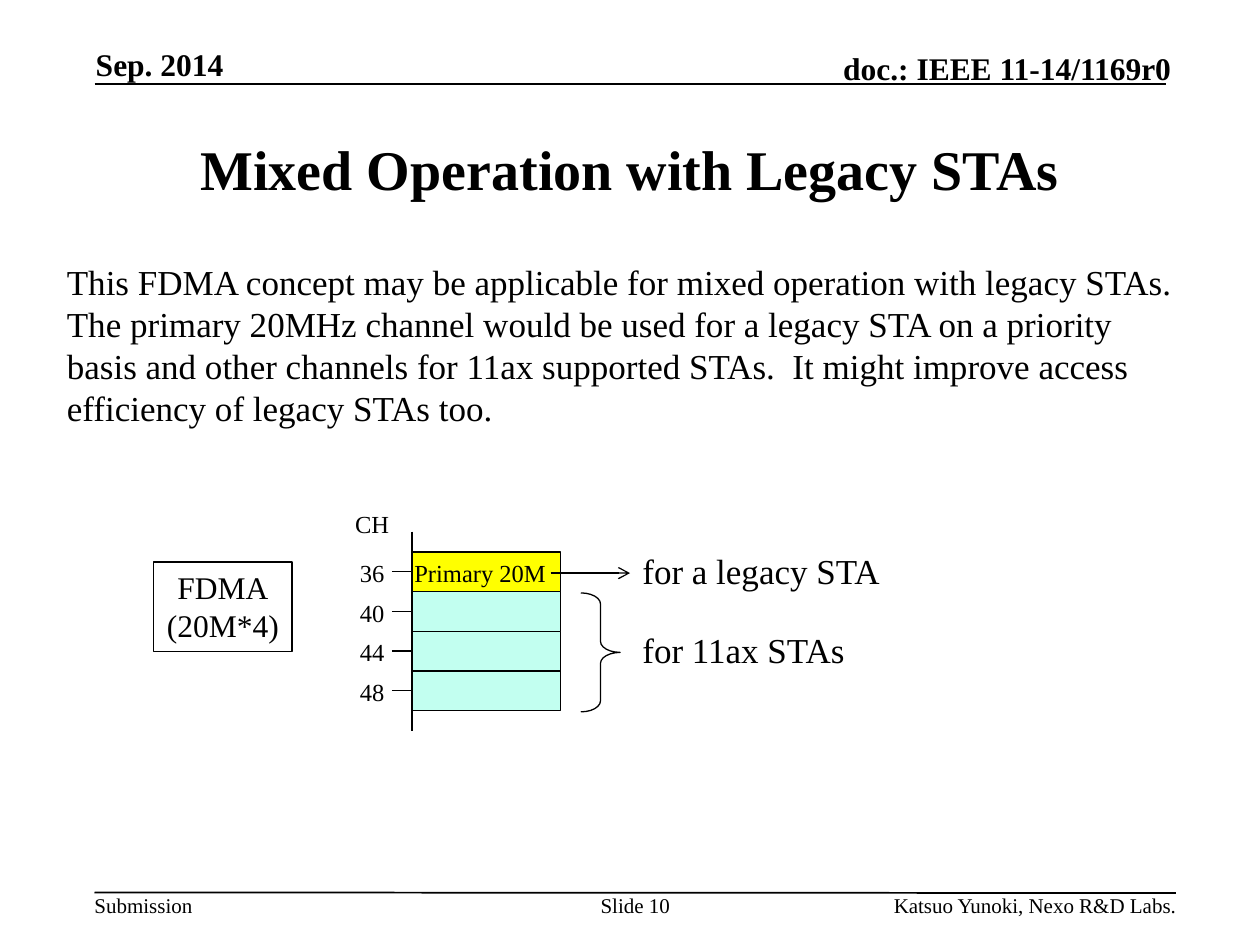
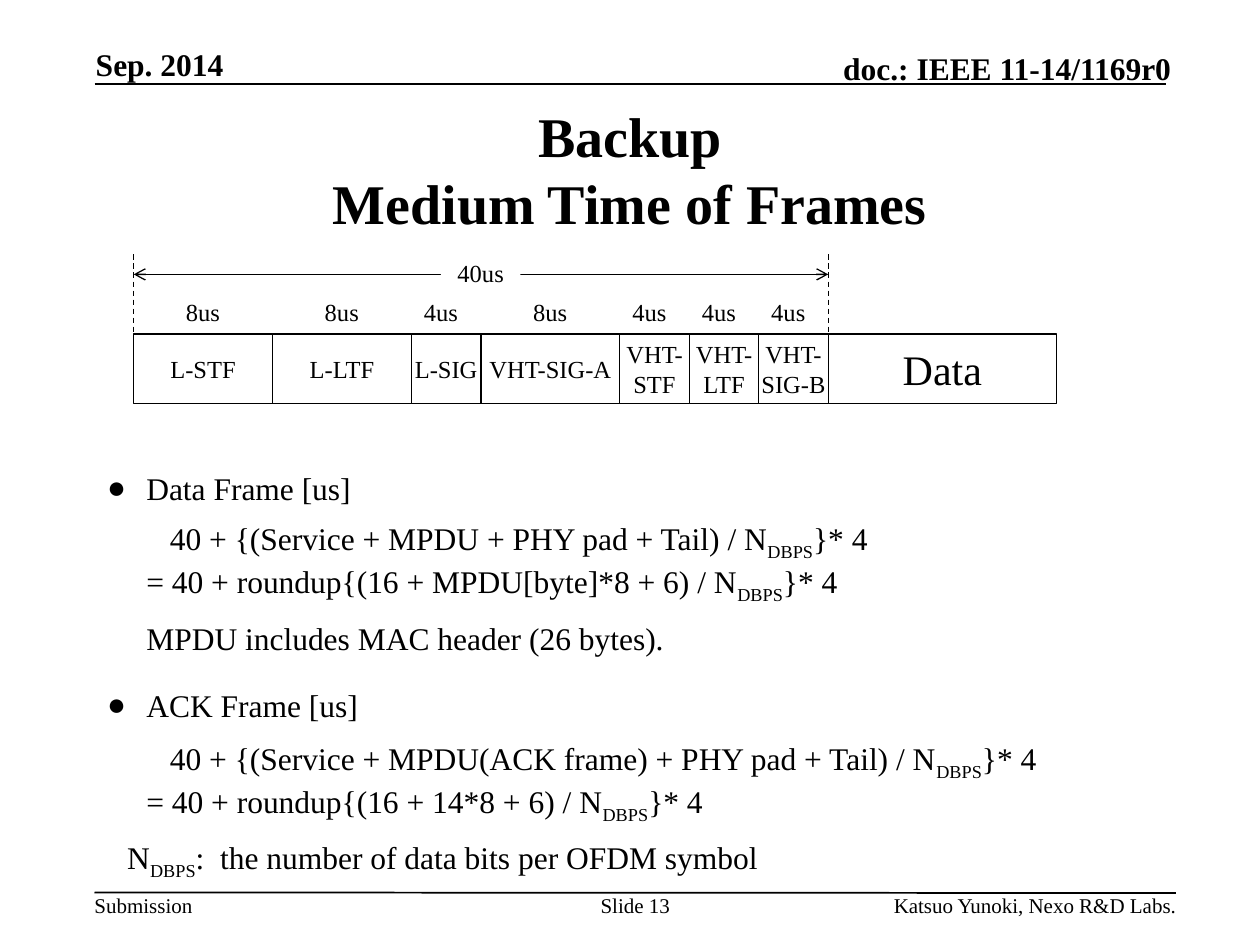
import dataclasses

import lxml.etree
import pptx
import pptx.dml.color
import pptx.enum.dml
import pptx.enum.shapes
import pptx.enum.text
import pptx.oxml.ns
import pptx.util

Pt = pptx.util.Pt
RGB = pptx.dml.color.RGBColor.from_string
qn = pptx.oxml.ns.qn
KIND = pptx.enum.shapes.MSO_SHAPE
ALIGN = pptx.enum.text.PP_ALIGN
ANCHOR = pptx.enum.text.MSO_ANCHOR


@dataclasses.dataclass(frozen=True)
class Theme:
    font: str = "Times New Roman"
    ink: str = "000000"
    paper: str = "FFFFFF"
    main: str = "FFFF00"
    rest: str = "C2FFF0"
    title: int = 32
    data: int = 24
    body: int = 20
    text: int = 18
    small: int = 14
    foot: int = 12
    thin: float = 0.75
    rule: float = 1


look = Theme()


def label(slide, text, box, kind=None, holder=None, size=look.small, bold=False,
          align=ALIGN.LEFT, anchor=ANCHOR.TOP, pad=(7.2, 3.6), wrap=True,
          fill=None, edge=False):
    """Write text in a text box, a shape or a placeholder; _x_ is subscript."""
    spot = [Pt(v) for v in box]
    if holder is not None:
        shape = holder
        shape.left, shape.top, shape.width, shape.height = spot
    elif kind is not None:
        shape = slide.shapes.add_shape(kind, *spot)
        shape.shadow.inherit = False
    else:
        shape = slide.shapes.add_textbox(*spot)
    if kind is not None:
        if fill:
            shape.fill.solid()
            shape.fill.fore_color.rgb = RGB(fill)
        else:
            shape.fill.background()
        if edge:
            shape.line.color.rgb = RGB(look.ink)
            shape.line.width = Pt(look.thin)
        else:
            shape.line.fill.background()
    frame = shape.text_frame
    frame.auto_size = pptx.enum.text.MSO_AUTO_SIZE.NONE
    frame.word_wrap = wrap
    frame.vertical_anchor = anchor
    frame.margin_left = frame.margin_right = Pt(pad[0])
    frame.margin_top = frame.margin_bottom = Pt(pad[1])
    for i, row in enumerate(text.split("\n")):
        para = frame.add_paragraph() if i else frame.paragraphs[0]
        para.alignment = align
        para.space_before = Pt(0)
        for j, part in enumerate(row.split("_")):
            if not part:
                continue
            run = para.add_run()
            run.text = part
            run.font.name = look.font
            run.font.size = Pt(size)
            run.font.bold = bold
            run.font.color.rgb = RGB(look.ink)
            if j % 2:
                run.font._element.set("baseline", "-25000")
    return shape


def wire(slide, x1, y1, x2, y2, width=look.thin, dash=False, ends=()):
    """Draw a straight line; ends lists headEnd and tailEnd arrows."""
    line = slide.shapes.add_connector(
        pptx.enum.shapes.MSO_CONNECTOR.STRAIGHT, Pt(x1), Pt(y1), Pt(x2), Pt(y2))
    line.line.color.rgb = RGB(look.ink)
    line.line.width = Pt(width)
    if dash:
        line.line.dash_style = pptx.enum.dml.MSO_LINE.DASH
    props = line._element.spPr
    for end in ends:
        lxml.etree.SubElement(props.find(qn("a:ln")), qn("a:" + end), type="arrow")
    lxml.etree.SubElement(props, qn("a:effectLst"))


deck = pptx.Presentation()
deck.slide_width, deck.slide_height = Pt(720), Pt(540)

# Shared header, footer and title
pages = []
for number, title in ((10, "Mixed Operation with Legacy STAs"),
                      (13, "Backup\nMedium Time of Frames")):
    page = deck.slides.add_slide(deck.slide_layouts[1])
    pages.append(page)
    wire(page, 54, 48.2, 666, 48.2, look.rule)
    wire(page, 54, 510, 672, 510.3, look.rule)
    label(page, title, (54, 54.4, 612, 83.5), holder=page.shapes.title,
          size=look.title, bold=True, align=ALIGN.CENTER, anchor=ANCHOR.MIDDLE)
    for text, box, align in (
            ("Sep. 2014", (54.7, 26, 147.6, 21.5), ALIGN.LEFT),
            ("doc.: IEEE 11-14/1169r0", (393.8, 28, 275.5, 21.5), ALIGN.RIGHT)):
        label(page, text, box, size=look.text, bold=True, align=align,
              anchor=ANCHOR.BOTTOM, pad=(0, 0))
    for text, x, w, align in (
            ("Submission", 54, 56, ALIGN.LEFT),
            (f"Slide {number}", 342, 42, ALIGN.CENTER),
            ("Katsuo Yunoki, Nexo R&D Labs.", 422, 250.3, ALIGN.RIGHT)):
        label(page, text, (x, 510, w, 14.4), size=look.foot, align=align,
              pad=(0, 0), wrap=False if x == 54 else True)
mixed, backup = pages

# Mixed operation: paragraph
body = label(
    mixed,
    "This FDMA concept may be applicable for mixed operation with legacy STAs.  "
    "The primary 20MHz channel would be used for a legacy STA on a priority basis "
    "and other channels for 11ax supported STAs.  It might improve access "
    "efficiency of legacy STAs too.",
    (31, 145.4, 652.3, 104.4), holder=mixed.placeholders[1], size=look.body)
props = body.text_frame.paragraphs[0]._p.get_or_add_pPr()
props.set("marL", "0")
props.set("indent", "0")
lxml.etree.SubElement(props, qn("a:buNone"))

# Mixed operation: channel chart
label(mixed, "FDMA\n(20M*4)", (87.8, 321.1, 79.2, 51.1), kind=KIND.RECTANGLE,
      size=look.text, align=ALIGN.CENTER, wrap=False, edge=True)
axis, top, step = 235.4, 315.4, 22.68
wire(mixed, axis, 303.8, axis, 417.6)
label(mixed, "CH", (195.8, 287.3, 39.6, 24.5))
for i, channel in enumerate((36, 40, 44, 48)):
    y = top + i * step
    label(mixed, str(channel), (195.8, y, 33.8, 24.5), align=ALIGN.CENTER)
    wire(mixed, axis - 11.5, y + step / 2, axis + 11.5, y + step / 2)
    label(mixed, "", (axis, y, 85, step), kind=KIND.RECTANGLE,
          fill=look.rest if i else look.main, edge=True)
label(mixed, "Primary 20M", (229.7, top, 90, 24.5), wrap=False)

# Mixed operation: who uses which channel
wire(mixed, 314.6, 327.5, 360, 327.5, ends=["tailEnd"])
brace = label(mixed, "", (331.9, 338.8, 22.5, 68), kind=KIND.RIGHT_BRACE, edge=True)
brace.adjustments[0] = 0.28
for text, y in (("for a legacy STA", 310.3), ("for 11ax STAs", 355.7)):
    label(mixed, text, (360, y, 164, 31.7), size=look.body)

# Backup: frame fields, each as wide as its time
start, unit, x = 76.4, 39.69, 76.4
for field, time in (("L-STF", 8), ("L-LTF", 8), ("L-SIG", 4), ("VHT-SIG-A", 8),
                    ("VHT-\nSTF", 4), ("VHT-\nLTF", 4), ("VHT-\nSIG-B", 4),
                    ("Data", 0)):
    wide = time / 4 * unit or 130.3
    label(backup, field, (x, 190.8, wide, 39.7), kind=KIND.RECTANGLE,
          size=look.small if time else look.data, align=ALIGN.CENTER,
          anchor=ANCHOR.MIDDLE, wrap=False, fill=look.paper, edge=True)
    if time:
        label(backup, f"{time}us", (x + (22.7 if time == 8 else 0), 166.3, 39.7, 24.5))
        x += wide

# Backup: total time
for edge in (start, x):
    wire(backup, edge, 145.4, edge, 190.8, dash=True)
wire(backup, start, 156.8, x, 156.8, ends=["headEnd", "tailEnd"])
label(backup, "40us", (252, 144, 45.4, 24.5), kind=KIND.RECTANGLE,
      align=ALIGN.CENTER, fill=look.paper)

# Backup: formulas as text, left margin, first-line indent, space before
rows = (
    ("Data Frame [us]", 22.4, -22.4, 0),
    ("40 + {(Service + MPDU + PHY pad + Tail) / N_DBPS_}* 4", 22.4, 13.5, 7.4),
    ("= 40 + roundup{(16 + MPDU[byte]*8 + 6) / N_DBPS_}* 4", 22.4, 0, 0),
    ("MPDU includes MAC header (26 bytes).", 22.4, 0, 7.7),
    ("ACK Frame [us]", 22.4, -22.4, 16.7),
    ("40 + {(Service + MPDU(ACK frame) + PHY pad + Tail) / N_DBPS_}* 4",
     22.4, 13.5, 8.8),
    ("= 40 + roundup{(16 + 14*8 + 6) / N_DBPS_}* 4", 22.4, 0, 0),
    ("N_DBPS_:  the number of data bits per OFDM symbol", 11.5, 0, 7.6),
)
body = label(backup, "\n".join(row[0] for row in rows), (54, 264.2, 612, 240),
             holder=backup.placeholders[1], size=look.text)
for para, (_, left, first, gap) in zip(body.text_frame.paragraphs, rows):
    para.space_before = Pt(gap)
    props = para._p.get_or_add_pPr()
    props.set("marL", str(Pt(left)))
    props.set("indent", str(Pt(first)))
    if first < 0:
        tint = lxml.etree.SubElement(props, qn("a:buClr"))
        lxml.etree.SubElement(tint, qn("a:srgbClr"), val=look.ink)
        lxml.etree.SubElement(props, qn("a:buFont"), typeface=look.font)
        lxml.etree.SubElement(props, qn("a:buChar"), char="●")
    else:
        lxml.etree.SubElement(props, qn("a:buNone"))

deck.save("out.pptx")
